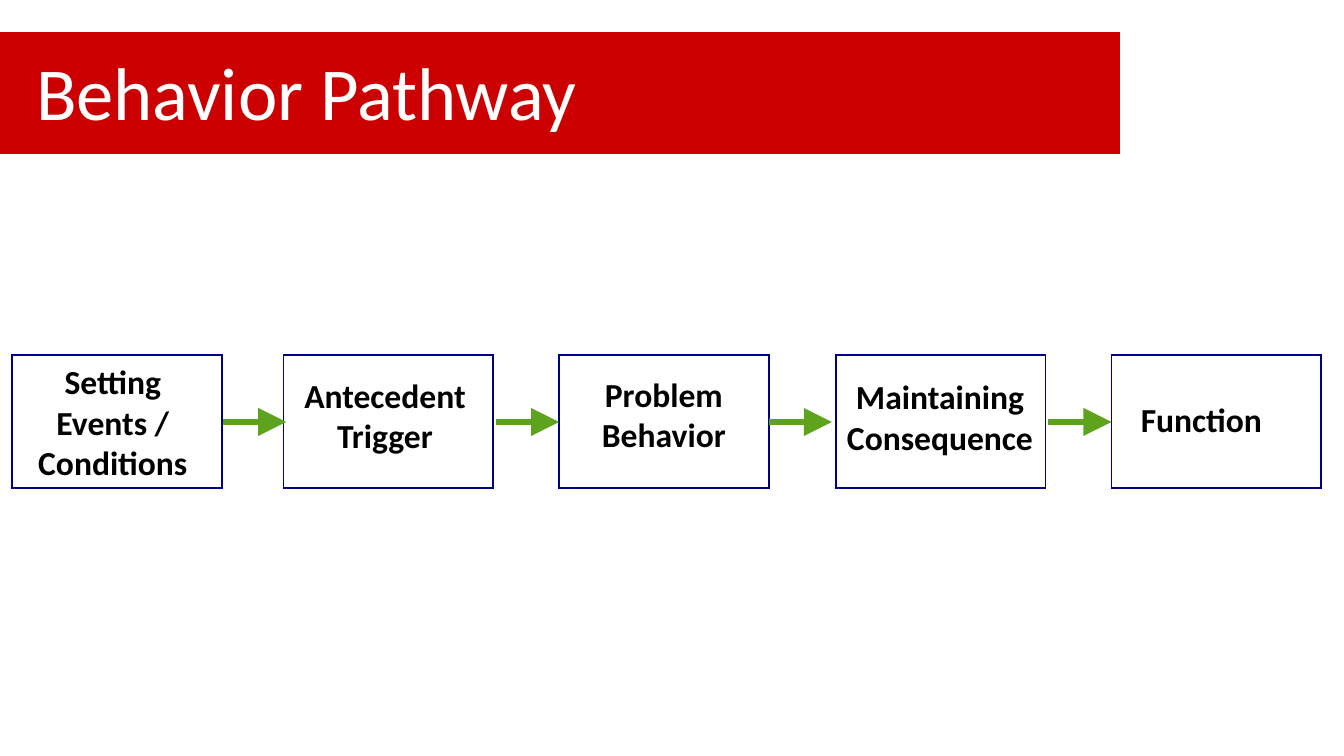
from lxml.etree import SubElement
from pptx import Presentation
from pptx.dml.color import RGBColor
from pptx.enum.shapes import MSO_CONNECTOR, MSO_SHAPE
from pptx.enum.text import MSO_ANCHOR, PP_ALIGN
from pptx.oxml.ns import qn
from pptx.util import Inches, Pt

COLORS = {
    "banner": "CC0000",
    "white": "FFFFFF",
    "border": "000080",
    "text": "000000",
    "arrow": "5DA31E",
}
FONT = "Calibri"
BOX_TOP, BOX_WIDTH, BOX_HEIGHT = 2.64, 1.56, 0.99
ARROW_Y, ARROW_LENGTH = 3.14, 0.47

STAGES = [
    (0.09, ["Setting Events /", "Conditions"], (0.09, 2.64, 1.5, 1), PP_ALIGN.CENTER),
    (2.11, ["Antecedent Trigger"], (2.03, 2.74, 1.67, 0.77), PP_ALIGN.CENTER),
    (4.16, ["Problem Behavior"], (4.19, 2.73, 1.5, 0.77), PP_ALIGN.CENTER),
    (6.22, ["Maintaining", "Consequence"], (6.08, 2.75, 1.83, 0.77), PP_ALIGN.CENTER),
    (8.27, ["Function"], (8.39, 2.92, 1.33, 0.44), PP_ALIGN.LEFT),
]
ARROW_STARTS = [1.66, 3.69, 5.72, 7.8]


class PathwaySlide:
    def __init__(self, page):
        self.page = page

    def color(self, name):
        return RGBColor.from_string(COLORS[name])

    def rectangle(self, place, line, width, fill=None):
        box = self.page.shapes.add_shape(MSO_SHAPE.RECTANGLE, *map(Inches, place))
        box.shadow.inherit = False
        if fill:
            box.fill.solid()
            box.fill.fore_color.rgb = self.color(fill)
        else:
            box.fill.background()
        box.line.color.rgb = self.color(line)
        box.line.width = Pt(width)
        SubElement(box._element.spPr.find(qn("a:ln")), qn("a:miter"), lim="800000")

    def text(self, place, lines, size, color, bold=False,
             align=PP_ALIGN.LEFT, anchor=MSO_ANCHOR.TOP):
        box = self.page.shapes.add_textbox(*map(Inches, place))
        frame = box.text_frame
        frame.word_wrap = True
        frame.vertical_anchor = anchor
        frame.text = "\n".join(lines)
        for para in frame.paragraphs:
            para.alignment = align
            for span in para.runs:
                span.font.name = FONT
                span.font.size = Pt(size)
                span.font.bold = bold
                span.font.color.rgb = self.color(color)

    def arrow(self, start):
        arrow = self.page.shapes.add_connector(
            MSO_CONNECTOR.STRAIGHT, Inches(start), Inches(ARROW_Y),
            Inches(start + ARROW_LENGTH), Inches(ARROW_Y))
        arrow.line.color.rgb = self.color("arrow")
        arrow.line.width = Pt(3)
        properties = arrow._element.spPr
        SubElement(properties.find(qn("a:ln")), qn("a:tailEnd"),
                   type="triangle", w="lg", len="lg")
        SubElement(properties, qn("a:effectLst"))


def main():
    deck = Presentation()
    deck.slide_width = Inches(10)
    deck.slide_height = deck.slide_width * 9 // 16
    slide = PathwaySlide(deck.slides.add_slide(deck.slide_layouts[6]))

    slide.rectangle((-0.08, 0.23, 8.42, 0.92), "white", 0.75, fill="banner")
    slide.text((0.17, 0.27, 8.17, 0.81), ["Behavior Pathway"], 40, "white",
               anchor=MSO_ANCHOR.MIDDLE)
    for left, lines, place, align in STAGES:
        slide.rectangle((left, BOX_TOP, BOX_WIDTH, BOX_HEIGHT), "border", 1)
        slide.text(place, lines, 18, "text", bold=True, align=align)
    for start in ARROW_STARTS:
        slide.arrow(start)
    deck.save("out.pptx")


if __name__ == "__main__":
    main()
